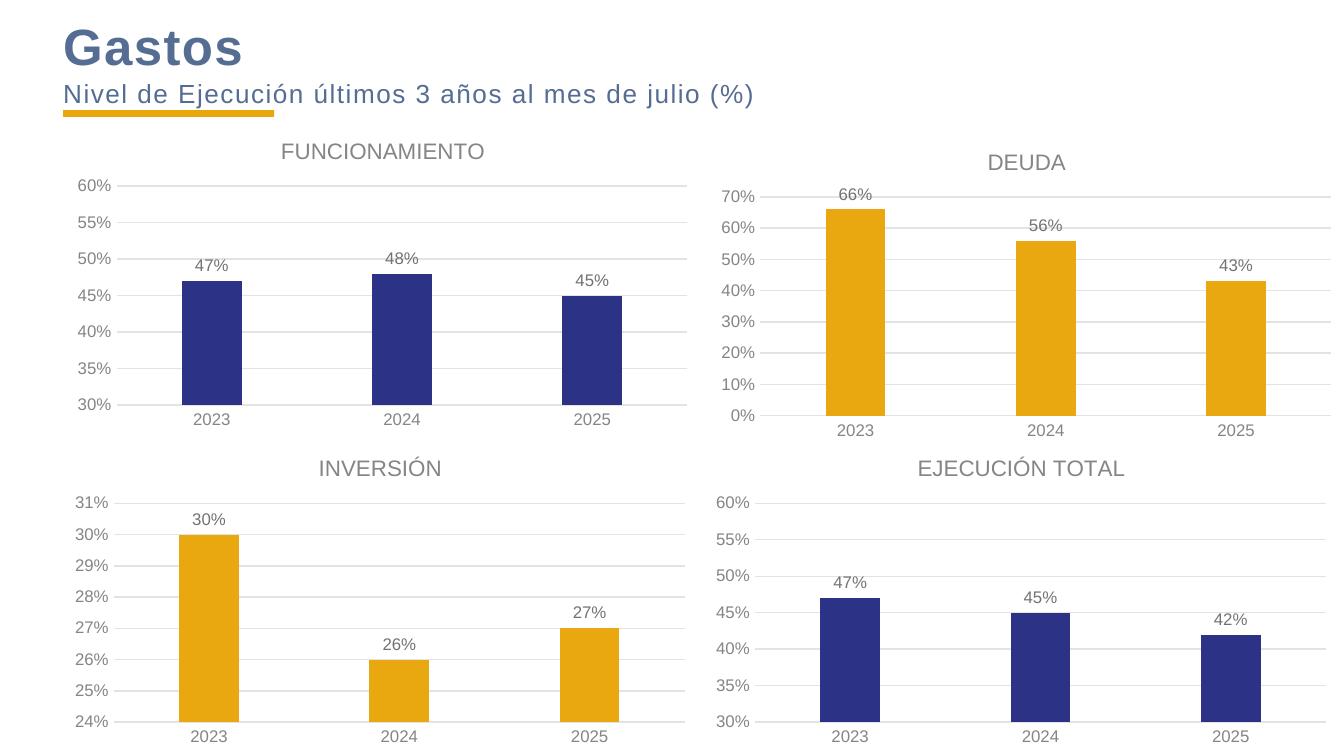
import pptx
import pptx.chart.data
import pptx.dml.color
import pptx.enum.chart
import pptx.enum.shapes
import pptx.enum.text
import pptx.oxml
import pptx.util

NAVY, GOLD, SLATE = "2C3386", "E9A80F", "556D93"
GRID, AXIS_TEXT, LABEL_TEXT = "E3E3E3", "858585", "727272"
FONT = "Arial"
HEADING = [("Gastos", 27.3, True),
           ("Nivel de Ejecución últimos 3 años al mes de julio (%)", 14, False)]
YEARS = ["2023", "2024", "2025"]
CHARTS = [
    ("FUNCIONAMIENTO", (0.49, 0.89), NAVY, (0.47, 0.48, 0.45), (0.3, 0.6, 0.05)),
    ("DEUDA", (5.28, 0.97), GOLD, (0.66, 0.56, 0.43), (0, 0.7, 0.1)),
    ("INVERSIÓN", (0.47, 3.25), GOLD, (0.3, 0.26, 0.27), (0.24, 0.31, 0.01)),
    ("EJECUCIÓN TOTAL", (5.24, 3.25), NAVY, (0.47, 0.45, 0.42), (0.3, 0.6, 0.05)),
]
CHART_SIZE = (4.72, 2.36)
PLOT_SHARE = {"x": 0.08, "y": 0.21, "w": 0.9, "h": 0.69}


def inches(*lengths):
    return [pptx.util.Inches(length) for length in lengths]


def color(value):
    return pptx.dml.color.RGBColor.from_string(value)


def style(font, size, value, bold=False):
    font.name, font.size, font.bold = FONT, pptx.util.Pt(size), bold
    font.color.rgb = color(value)


def add_heading(slide):
    box = slide.shapes.add_textbox(*inches(0.47, 0.1, 6.78, 0.72))
    frame = box.text_frame
    frame.word_wrap = True
    frame.auto_size = pptx.enum.text.MSO_AUTO_SIZE.SHAPE_TO_FIT_TEXT
    frame.margin_left = frame.margin_right = frame.margin_bottom = 0
    frame.margin_top = pptx.util.Inches(0.01)
    for index, (text, size, bold) in enumerate(HEADING):
        para = frame.add_paragraph() if index else frame.paragraphs[0]
        if index:
            para.space_before = pptx.util.Pt(0.8)
        span = para.add_run()
        span.text = text
        style(para.font, size, SLATE, bold)
        span.font._element.set("spc", "80")
    rule = slide.shapes.add_shape(pptx.enum.shapes.MSO_SHAPE.RECTANGLE,
                                  *inches(0.47, 0.82, 1.57, 0.05))
    rule.shadow.inherit = False
    rule.fill.solid()
    rule.fill.fore_color.rgb = color("E9A70B")
    rule.line.fill.background()


def place_plot(chart):
    parts = "".join(f'<c:{side}Mode val="edge"/>' for side in "xy")
    parts += "".join(f'<c:{key} val="{share}"/>' for key, share in PLOT_SHARE.items())
    layout = pptx.oxml.parse_xml(
        '<c:layout xmlns:c="http://schemas.openxmlformats.org/drawingml/2006/chart">'
        f'<c:manualLayout><c:layoutTarget val="inner"/>{parts}</c:manualLayout></c:layout>')
    area = chart._chartSpace.chart.plotArea
    for old in area.xpath("./c:layout"):
        area.remove(old)
    area.insert(0, layout)


def style_line(line):
    line.color.rgb = color(GRID)
    line.width = pptx.util.Pt(0.75)


def add_column_chart(slide, title, position, fill, values, scale):
    data = pptx.chart.data.CategoryChartData(number_format="0%")
    data.categories = YEARS
    data.add_series("Series 1", values)
    chart = slide.shapes.add_chart(
        pptx.enum.chart.XL_CHART_TYPE.COLUMN_CLUSTERED,
        *inches(*position, *CHART_SIZE), data).chart
    style(chart.font, 10, "434343")
    chart.has_legend = False
    chart.has_title = True
    chart.chart_title.include_in_layout = False
    para = chart.chart_title.text_frame.paragraphs[0]
    para.text = title
    style(para.font, 12, AXIS_TEXT)
    place_plot(chart)

    for axis in (chart.category_axis, chart.value_axis):
        axis.major_tick_mark = axis.minor_tick_mark = pptx.enum.chart.XL_TICK_MARK.NONE
        style(axis.tick_labels.font, 9, AXIS_TEXT)
    style_line(chart.category_axis.format.line)
    axis = chart.value_axis
    axis.minimum_scale, axis.maximum_scale, axis.major_unit = scale
    axis.format.line.fill.background()
    style_line(axis.major_gridlines.format.line)
    axis.tick_labels.number_format = "0%"
    axis.tick_labels.number_format_is_linked = False

    plot = chart.plots[0]
    plot.gap_width, plot.overlap, plot.vary_by_categories = 219, -27, False
    series = plot.series[0]
    series.format.fill.solid()
    series.format.fill.fore_color.rgb = color(fill)
    labels = series.data_labels
    labels.show_value = True
    labels.position = pptx.enum.chart.XL_LABEL_POSITION.OUTSIDE_END
    style(labels.font, 9, LABEL_TEXT)


deck = pptx.Presentation()
deck.slide_width = pptx.util.Inches(10)
deck.slide_height = deck.slide_width * 9 // 16
page = deck.slides.add_slide(deck.slide_layouts[6])
add_heading(page)
for entry in CHARTS:
    add_column_chart(page, *entry)
deck.save("out.pptx")
